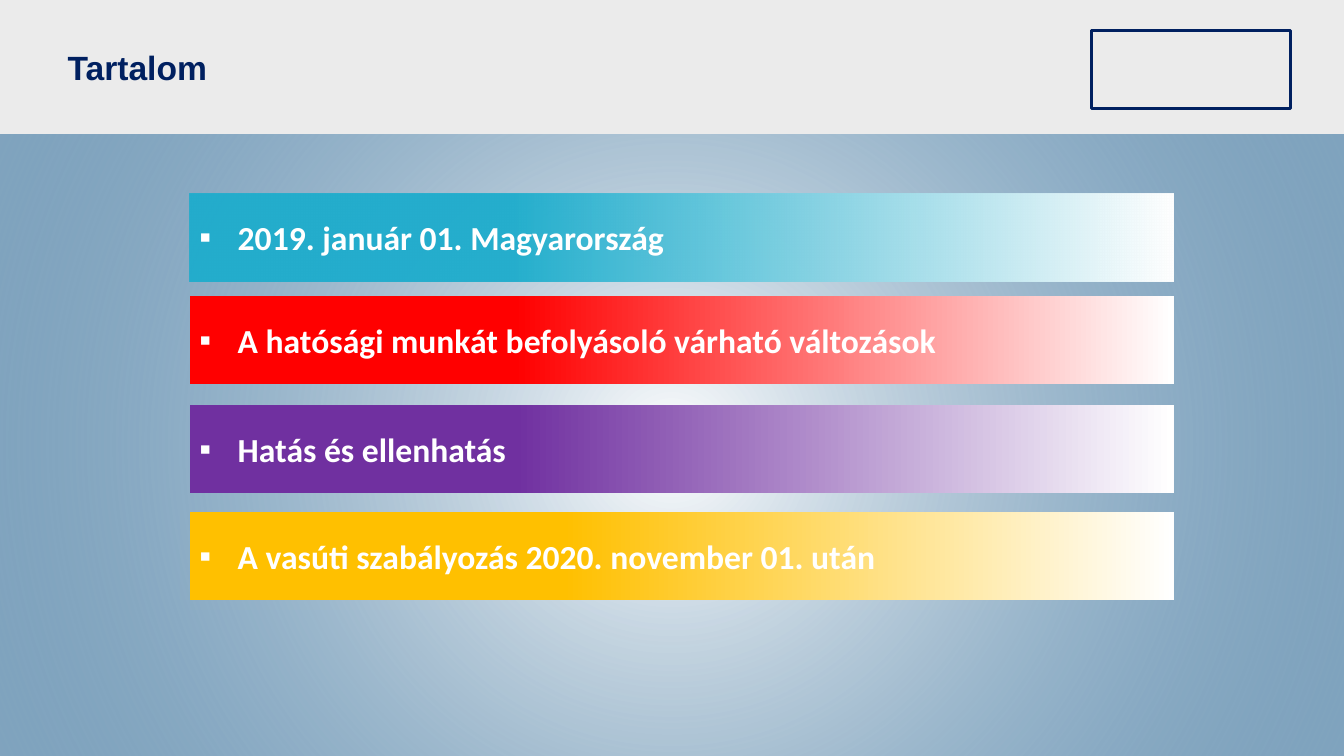
from lxml.etree import SubElement
from pptx import Presentation
from pptx.dml.color import RGBColor
from pptx.enum.shapes import MSO_SHAPE
from pptx.enum.text import MSO_ANCHOR, MSO_AUTO_SIZE, PP_ALIGN
from pptx.oxml.ns import qn
from pptx.util import Inches, Pt

COLORS = {
    "white": "FFFFFF", "navy": "002060", "header": "EBEBEB", "backdrop": "00487E",
    "teal": "1FAECD", "red": "FF0000", "purple": "7030A0", "amber": "FFC000",
}
TOPICS = [
    ("2019. január 01. Magyarország", 1.92, "teal", 33, 95),
    ("A hatósági munkát befolyásoló várható változások", 2.94, "red", 33, 100),
    ("Hatás és ellenhatás", 4.02, "purple", 33, 100),
    ("A vasúti szabályozás 2020. november 01. után", 5.08, "amber", 38, 100),
]


def write(para, text, font="Calibri", size=24, color="white", bold=True):
    """Add a formatted run of text to a paragraph."""
    span = para.add_run()
    span.text = text
    span.font.name = font
    span.font.size = Pt(size)
    span.font.bold = bold
    span.font.color.rgb = RGBColor.from_string(COLORS[color])


class ContentsSlide:
    """Draws the elements of the contents slide."""

    def __init__(self, deck):
        """Add a page with a title placeholder."""
        self.page = deck.slides.add_slide(deck.slide_layouts[5])

    def rectangle(self, left, top, width, height, fill=None, line=None):
        """Add a flat rectangle with an optional fill and outline."""
        box = self.page.shapes.add_shape(
            MSO_SHAPE.RECTANGLE, Inches(left), Inches(top), Inches(width), Inches(height))
        box.shadow.inherit = False
        if fill:
            box.fill.solid()
            box.fill.fore_color.rgb = RGBColor.from_string(COLORS[fill])
        else:
            box.fill.background()
        if line:
            box.line.color.rgb = RGBColor.from_string(COLORS[line])
            box.line.width = Pt(2)
        else:
            box.line.fill.background()
        return box

    def gradient(self, box, stops, radial=False):
        """Fill a shape with stops of position, colour and opacity in percent."""
        box.fill.gradient()
        grad = box._element.spPr.find(qn("a:gradFill"))
        for child in list(grad):
            grad.remove(child)
        stop_list = SubElement(grad, qn("a:gsLst"))
        for position, color, opacity in stops:
            stop = SubElement(stop_list, qn("a:gs"), pos=str(position * 1000))
            shade = SubElement(stop, qn("a:srgbClr"), val=COLORS[color])
            if opacity < 100:
                SubElement(shade, qn("a:alpha"), val=str(opacity * 1000))
        if radial:
            spread = SubElement(grad, qn("a:path"), path="circle")
            SubElement(spread, qn("a:fillToRect"), l="50000", t="50000", r="50000", b="50000")
        else:
            SubElement(grad, qn("a:lin"), ang="0", scaled="0")

    def title(self, text):
        """Place the title in front of the header band."""
        box = self.page.shapes.title
        self.page.shapes._spTree.append(box._element)
        box.left, box.top = Inches(0.67), Inches(0.17)
        box.width, box.height = Inches(12), Inches(1)
        frame = box.text_frame
        frame.margin_left = frame.margin_right = frame.margin_top = frame.margin_bottom = 0
        frame.auto_size = MSO_AUTO_SIZE.NONE
        frame.vertical_anchor = MSO_ANCHOR.MIDDLE
        para = frame.paragraphs[0]
        para.alignment = PP_ALIGN.LEFT
        write(para, text, font="Arial", color="navy")

    def topic(self, text, top, color, solid_until, opacity):
        """Add a fading bar with one bulleted topic."""
        box = self.rectangle(1.88, top, 9.76, 0.87)
        self.gradient(box, [(2, color, opacity), (solid_until, color, opacity), (100, "white", 100)])
        frame = box.text_frame
        frame.word_wrap = True
        frame.vertical_anchor = MSO_ANCHOR.MIDDLE
        para = frame.paragraphs[0]
        para.alignment = PP_ALIGN.LEFT
        settings = para._p.get_or_add_pPr()
        settings.set("marL", str(Inches(0.38)))
        settings.set("indent", str(-Inches(0.38)))
        SubElement(settings, qn("a:buFont"), typeface="Arial")
        SubElement(settings, qn("a:buChar"), char="▪")
        write(para, text)


def main():
    """Build and save the deck."""
    deck = Presentation()
    deck.slide_width, deck.slide_height = Inches(13.33), Inches(7.5)
    slide = ContentsSlide(deck)
    backdrop = slide.rectangle(0, 1.33, 13.33, 6.17)
    slide.gradient(backdrop, [(0, "white", 100), (100, "backdrop", 50)], radial=True)
    slide.rectangle(0, 0, 13.33, 1.33, fill="header")
    slide.title("Tartalom")
    slide.rectangle(10.83, 0.3, 1.97, 0.78, line="navy")
    for topic in TOPICS:
        slide.topic(*topic)
    deck.save("out.pptx")


if __name__ == "__main__":
    main()
